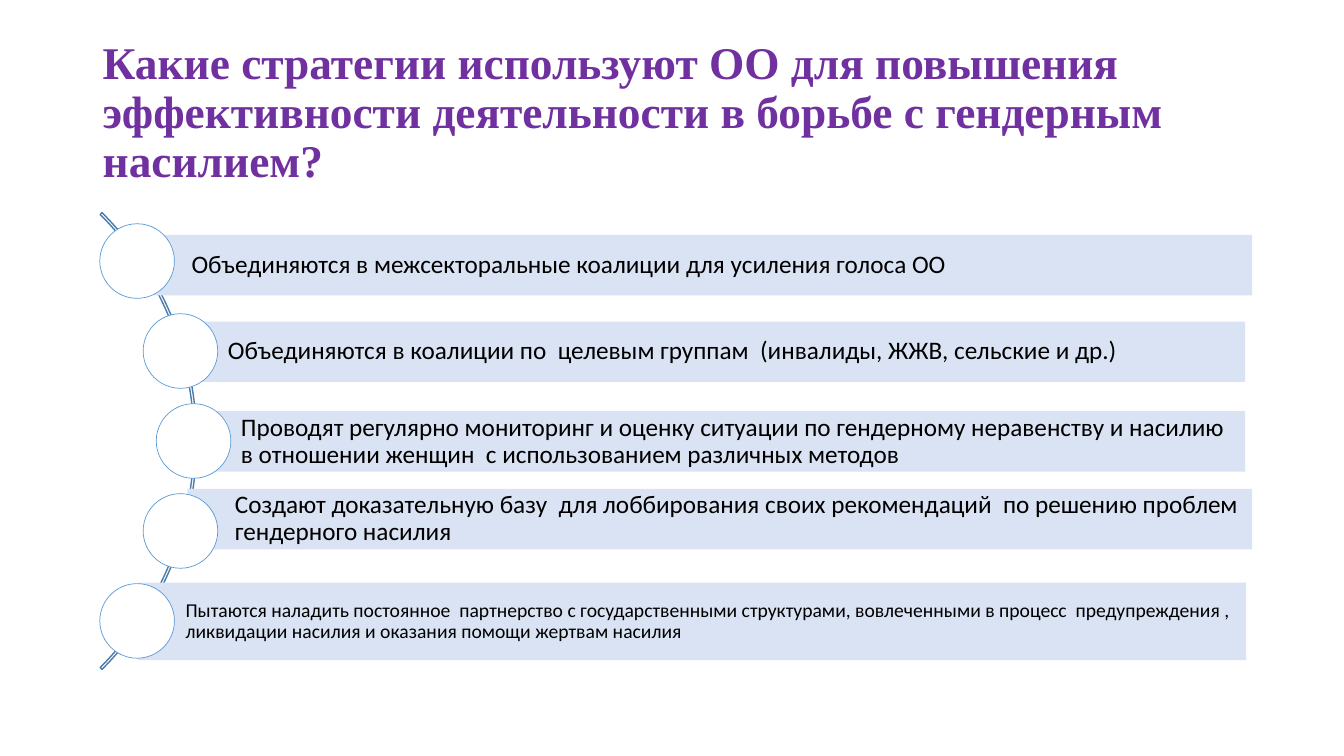
from pptx import Presentation
from pptx.dml.color import RGBColor
from pptx.enum.shapes import MSO_SHAPE
from pptx.enum.text import MSO_ANCHOR, PP_ALIGN
from pptx.util import Inches, Pt

PURPLE = RGBColor(0x70, 0x30, 0xA0)
ARC_BLUE = RGBColor(0x49, 0x7C, 0xAB)
RING_BLUE = RGBColor(0x5B, 0x9B, 0xD5)
BAR_BLUE = RGBColor(0xDA, 0xE3, 0xF3)
WHITE = RGBColor(0xFF, 0xFF, 0xFF)
BLACK = RGBColor(0, 0, 0)
ARC, RECTANGLE, OVAL = MSO_SHAPE.BLOCK_ARC, MSO_SHAPE.RECTANGLE, MSO_SHAPE.OVAL
MIDDLE, LEFT = MSO_ANCHOR.MIDDLE, PP_ALIGN.LEFT

CIRCLE_SIZE = 0.74
FIRST_CIRCLE_TOP, LAST_CIRCLE_TOP = 2.22, 5.79

# Circle left; bar left, top, width, height; text size; text
STRATEGIES = [
    (0.99, 1.43, 2.33, 10.99, 0.6, 18,
     "Объединяются в межсекторальные коалиции для усиления голоса ОО"),
    (1.42, 1.79, 3.19, 10.56, 0.6, 18,
     "Объединяются в коалиции по  целевым группам  (инвалиды, ЖЖВ, сельские и др.)"),
    (1.55, 1.92, 4.08, 10.43, 0.6, 18,
     "Проводят регулярно мониторинг и оценку ситуации по гендерному неравенству "
     "и насилию в отношении женщин  с использованием различных методов"),
    (1.42, 1.86, 4.85, 10.56, 0.6, 18,
     "Создают доказательную базу  для лоббирования своих рекомендаций  "
     "по решению проблем гендерного насилия"),
    (0.99, 1.37, 5.78, 10.99, 0.77, 14,
     "Пытаются наладить постоянное  партнерство с государственными структурами, "
     "вовлеченными в процесс  предупреждения , ликвидации насилия и оказания "
     "помощи жертвам насилия"),
]


def add_figure(kind, left, top, width, height, fill=None, line=None, line_width=1):
    figure = slide.shapes.add_shape(
        kind, Inches(left), Inches(top), Inches(width), Inches(height))
    figure.shadow.inherit = False
    if fill is None:
        figure.fill.background()
    else:
        figure.fill.solid()
        figure.fill.fore_color.rgb = fill
    if line is None:
        figure.line.fill.background()
    else:
        figure.line.color.rgb = line
        figure.line.width = Pt(line_width)
    return figure


def write_text(holder, text, font_name, size, color, bold=False):
    frame = holder.text_frame
    frame.word_wrap = True
    frame.vertical_anchor = MIDDLE
    paragraph = frame.paragraphs[0]
    paragraph.alignment = LEFT
    paragraph.line_spacing = 0.9
    run = paragraph.add_run()
    run.text = text
    run.font.name = font_name
    run.font.size = Pt(size)
    run.font.bold = bold
    run.font.color.rgb = color
    return frame


prs = Presentation()
prs.slide_width, prs.slide_height = Inches(13.33), Inches(7.5)
slide = prs.slides.add_slide(prs.slide_layouts[6])

title = slide.shapes.add_textbox(Inches(0.92), Inches(0.4), Inches(12.64), Inches(1.45))
write_text(title,
           "Какие стратегии используют ОО для повышения эффективности "
           "деятельности в борьбе с гендерным насилием?",
           "Times New Roman", 32.4, PURPLE, bold=True)

arc = add_figure(ARC, -4.46, 1.17, 6.41, 6.41, line=ARC_BLUE)
for index, value in enumerate((189, 27, 0.004)):
    arc.adjustments[index] = value

circle_step = (LAST_CIRCLE_TOP - FIRST_CIRCLE_TOP) / (len(STRATEGIES) - 1)
for index, (circle_left, left, top, width, height, size, text) in enumerate(STRATEGIES):
    bar = add_figure(RECTANGLE, left, top, width, height, fill=BAR_BLUE)
    frame = write_text(bar, text, "Calibri", size, BLACK)
    frame.margin_left = Inches(0.47)
    frame.margin_top = frame.margin_right = frame.margin_bottom = Inches(0.05)
    add_figure(OVAL, circle_left, FIRST_CIRCLE_TOP + index * circle_step,
               CIRCLE_SIZE, CIRCLE_SIZE, fill=WHITE, line=RING_BLUE, line_width=0.5)

prs.save("out.pptx")
